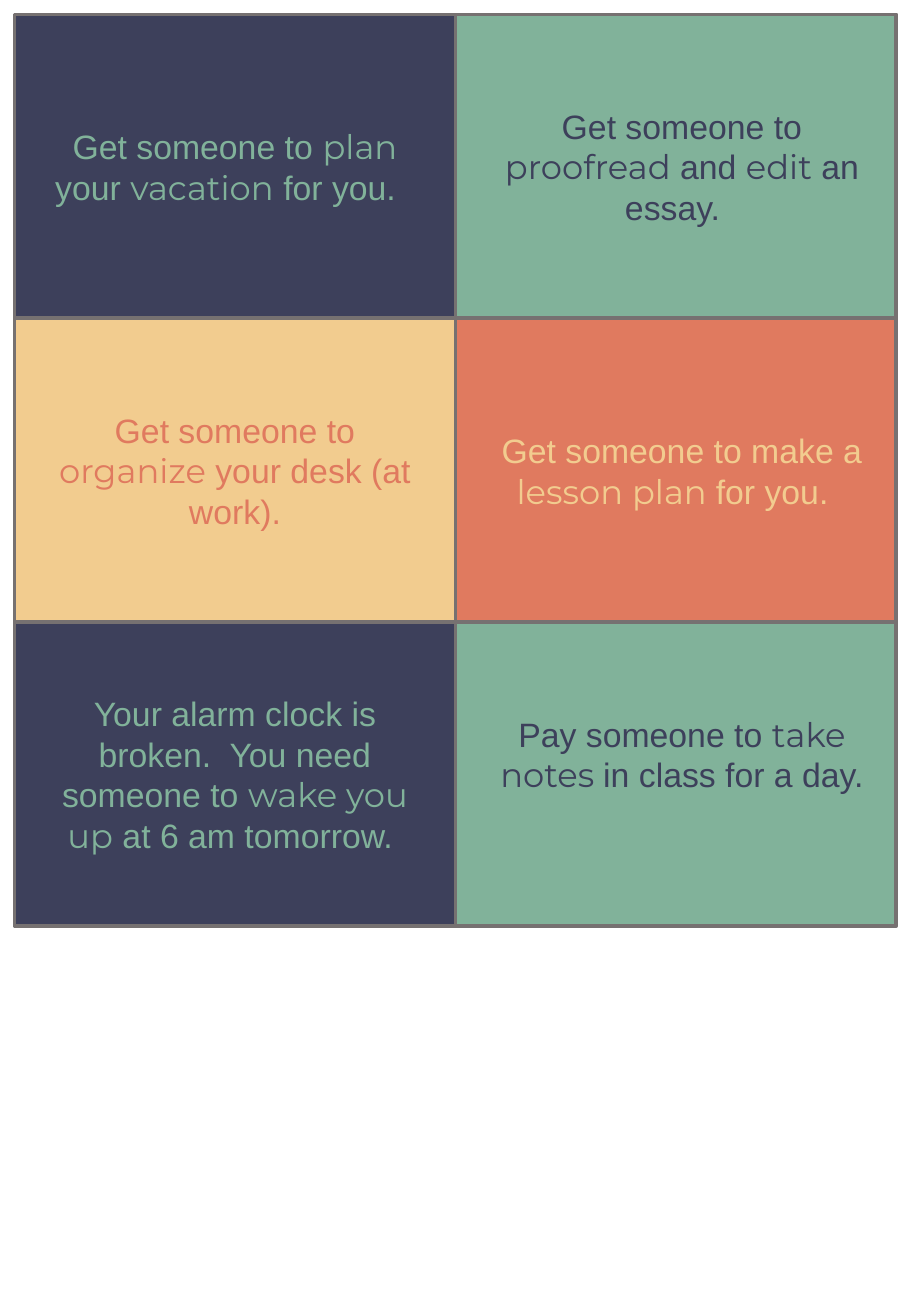
from pptx import Presentation
from pptx.dml.color import RGBColor
from pptx.enum.shapes import MSO_SHAPE
from pptx.enum.text import MSO_ANCHOR, MSO_AUTO_SIZE, PP_ALIGN
from pptx.util import Inches, Pt

RECT = MSO_SHAPE.RECTANGLE
MIDDLE = MSO_ANCHOR.MIDDLE
GROW = MSO_AUTO_SIZE.SHAPE_TO_FIT_TEXT
CENTER = PP_ALIGN.CENTER

NAVY = RGBColor(0x3D, 0x40, 0x5B)
GREEN = RGBColor(0x81, 0xB2, 0x9A)
YELLOW = RGBColor(0xF2, 0xCC, 0x8F)
CORAL = RGBColor(0xE0, 0x7A, 0x5F)
GRAY = RGBColor(0x76, 0x71, 0x71)

# Cards in reading order: fill, text colour, lines of room, text
# The text alternates between the plain font and the accent font
CARDS = [
    (NAVY, GREEN, 2,
     ["Get someone to ", "plan", " your ", "vacation", " for you.  "]),
    (GREEN, NAVY, 3,
     ["Get someone to ", "proofread", " and ", "edit", " an essay.  "]),
    (YELLOW, CORAL, 3,
     ["Get someone to ", "organize", " your desk (at work)."]),
    (CORAL, YELLOW, 2,
     ["Get someone to make a ", "lesson plan ", "for you.  "]),
    (NAVY, GREEN, 4,
     ["Your alarm clock is broken.  You need someone to ", "wake you up",
      " at 6 am tomorrow. "]),
    (GREEN, NAVY, 3,
     ["Pay someone to ", "take notes ", "in class for a day.  "]),
]
FONTS = ("Arial", "Montserrat")

# Grid, in inches
COLUMNS = 2
MARGIN = 0.12
CARD_W, CARD_H = 3.63, 2.5
TEXT_LEFTS = (0.32, 4.0)
TEXT_W = 3.23
LINE_H, PADDING = 0.34, 0.09


def add_card(slide, left, top, fill):
    s = slide.shapes.add_shape(RECT, Inches(left), Inches(top),
                               Inches(CARD_W), Inches(CARD_H))
    s.shadow.inherit = False
    s.fill.solid()
    s.fill.fore_color.rgb = fill
    s.line.color.rgb = GRAY
    s.line.width = Pt(2.25)


def add_task(slide, left, middle, lines, parts, color):
    height = lines * LINE_H + PADDING
    s = slide.shapes.add_textbox(Inches(left), Inches(middle - height / 2),
                                 Inches(TEXT_W), Inches(height))
    tf = s.text_frame
    tf.word_wrap = True
    tf.auto_size = GROW
    tf.vertical_anchor = MIDDLE
    p = tf.paragraphs[0]
    p.alignment = CENTER
    p.font.size = Pt(20)
    p.font.color.rgb = color
    for i, part in enumerate(parts):
        r = p.add_run()
        r.text = part
        r.font.name = FONTS[i % 2]


def main():
    prs = Presentation()
    prs.slide_width, prs.slide_height = Inches(7.5), Inches(10.83)
    slide = prs.slides.add_slide(prs.slide_layouts[6])

    # Each card with its task centred vertically
    for i, (fill, color, lines, parts) in enumerate(CARDS):
        row, col = divmod(i, COLUMNS)
        top = MARGIN + row * CARD_H
        add_card(slide, MARGIN + col * CARD_W, top, fill)
        add_task(slide, TEXT_LEFTS[col], top + CARD_H / 2, lines, parts, color)

    prs.save("out.pptx")


if __name__ == "__main__":
    main()
